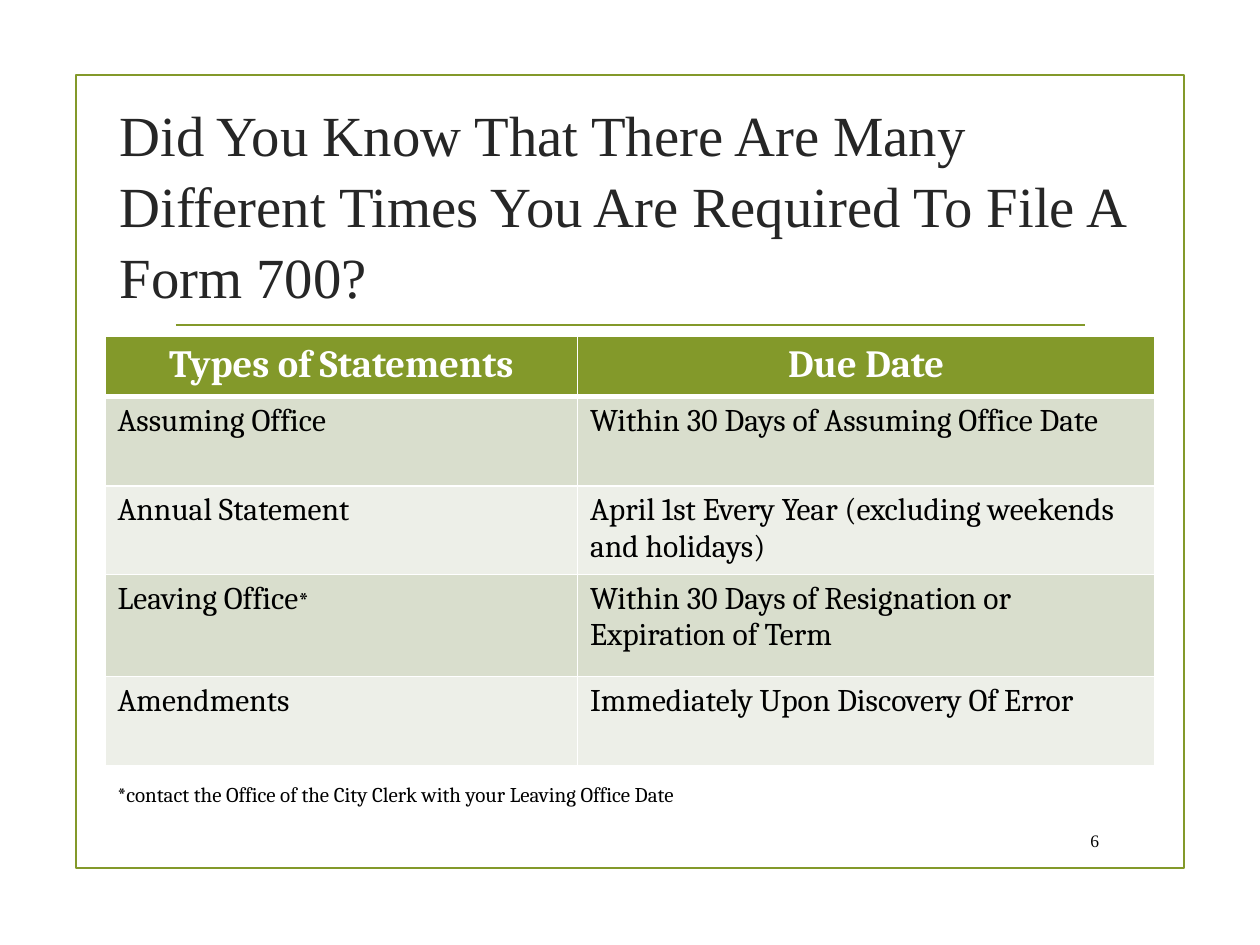
from lxml.etree import SubElement
from pptx import Presentation
from pptx.dml.color import RGBColor
from pptx.enum.shapes import MSO_CONNECTOR, MSO_SHAPE
from pptx.enum.text import MSO_ANCHOR, PP_ALIGN
from pptx.oxml.ns import qn
from pptx.util import Pt

# Content
TITLE = ["Did You Know That There Are Many Different Times You Are Required To File A",
         "Form 700?"]
HEAD = ["Types of Statements", "Due Date"]
ROWS = [
    ["Assuming Office", "Within 30 Days of Assuming Office Date"],
    ["Annual Statement", "April 1st Every Year (excluding weekends and holidays)"],
    ["Leaving Office*", "Within 30 Days of Resignation or Expiration of Term"],
    ["Amendments", "Immediately Upon Discovery Of Error"],
]
NOTE = "*contact the Office of the City Clerk with your Leaving Office Date"
PAGE = "6"

# Look
GREEN, WHITE, BLACK, GREY = "83992A", "FFFFFF", "000000", "262626"
BANDS = ["D9DECD", "EDEFE8"]
SERIF, BODY = "Times New Roman", "Cambria"
COLS = [270, 330]
HIGHS = [34.2, 51.2, 46.1, 58.3, 51.2]


def color(code):
    return RGBColor.from_string(code)


def add_run(para, text, size, face, code, bold=False):
    run = para.add_run()
    run.text = text
    font = run.font
    font.size, font.name, font.bold = Pt(size), face, bold
    font.color.rgb = color(code)


def add_box(slide, left, top, wide, high, anchor=MSO_ANCHOR.TOP):
    box = slide.shapes.add_textbox(Pt(left), Pt(top), Pt(wide), Pt(high))
    frame = box.text_frame
    frame.word_wrap = True
    frame.vertical_anchor = anchor
    return frame


def add_edges(cell, base):
    props = cell._tc.get_or_add_tcPr()
    for side, width in (("L", 1), ("R", 1), ("T", 1), ("B", base)):
        edge = SubElement(props, qn(f"a:ln{side}"), w=str(Pt(width)))
        fill = SubElement(edge, qn("a:solidFill"))
        SubElement(fill, qn("a:srgbClr"), val=WHITE)


def fill_cell(cell, text, row):
    head = row == 0
    # Borders come before the fill in the cell properties
    add_edges(cell, 3 if head else 1)
    cell.fill.solid()
    cell.fill.fore_color.rgb = color(GREEN if head else BANDS[(row - 1) % 2])
    para = cell.text_frame.paragraphs[0]
    if head:
        para.alignment = PP_ALIGN.CENTER
        add_run(para, text, 22, BODY, WHITE, True)
        return
    add_run(para, text.rstrip("*"), 18, BODY, BLACK)
    if text.endswith("*"):
        add_run(para, "*", 14, BODY, BLACK)


def main():
    deck = Presentation()
    deck.slide_width, deck.slide_height = Pt(720), Pt(540)
    slide = deck.slides.add_slide(deck.slide_layouts[6])
    shapes = slide.shapes

    # Frame
    frame = shapes.add_shape(MSO_SHAPE.RECTANGLE, Pt(43.6), Pt(42.7), Pt(633), Pt(453.4))
    frame.shadow.inherit = False
    frame.fill.background()
    frame.line.color.rgb = color(GREEN)
    frame.line.width = Pt(1.25)

    # Rule under the title
    rule = shapes.add_connector(MSO_CONNECTOR.STRAIGHT, Pt(100.5), Pt(185.6), Pt(620), Pt(185.6))
    rule.line.color.rgb = color(GREEN)
    rule.line.width = Pt(1.25)
    SubElement(rule._element.spPr, qn("a:effectLst"))

    # Title
    para = add_box(slide, 61.2, 52.6, 598.3, 127.4, MSO_ANCHOR.MIDDLE).paragraphs[0]
    para.line_spacing = 1.04
    for i, line in enumerate(TITLE):
        if i:
            para.add_line_break()
        add_run(para, line, 32.4, SERIF, GREY)

    # Page number
    box = add_box(slide, 597, 469.4, 31, 22.3, MSO_ANCHOR.MIDDLE)
    box.margin_left = box.margin_right = box.margin_top = box.margin_bottom = 0
    box.paragraphs[0].alignment = PP_ALIGN.RIGHT
    add_run(box.paragraphs[0], PAGE, 10, SERIF, BLACK)

    # Table of due dates
    grid = [HEAD] + ROWS
    table = shapes.add_table(len(grid), len(COLS), Pt(60), Pt(192.4),
                             Pt(sum(COLS)), Pt(sum(HIGHS))).table
    for col, wide in zip(table.columns, COLS):
        col.width = Pt(wide)
    for r, (high, texts) in enumerate(zip(HIGHS, grid)):
        table.rows[r].height = Pt(high)
        for c, text in enumerate(texts):
            fill_cell(table.cell(r, c), text, r)

    # Footnote
    note = add_box(slide, 60, 442.8, 360, 21.8)
    add_run(note.paragraphs[0], NOTE, 12, BODY, BLACK)

    deck.save("out.pptx")


if __name__ == "__main__":
    main()
